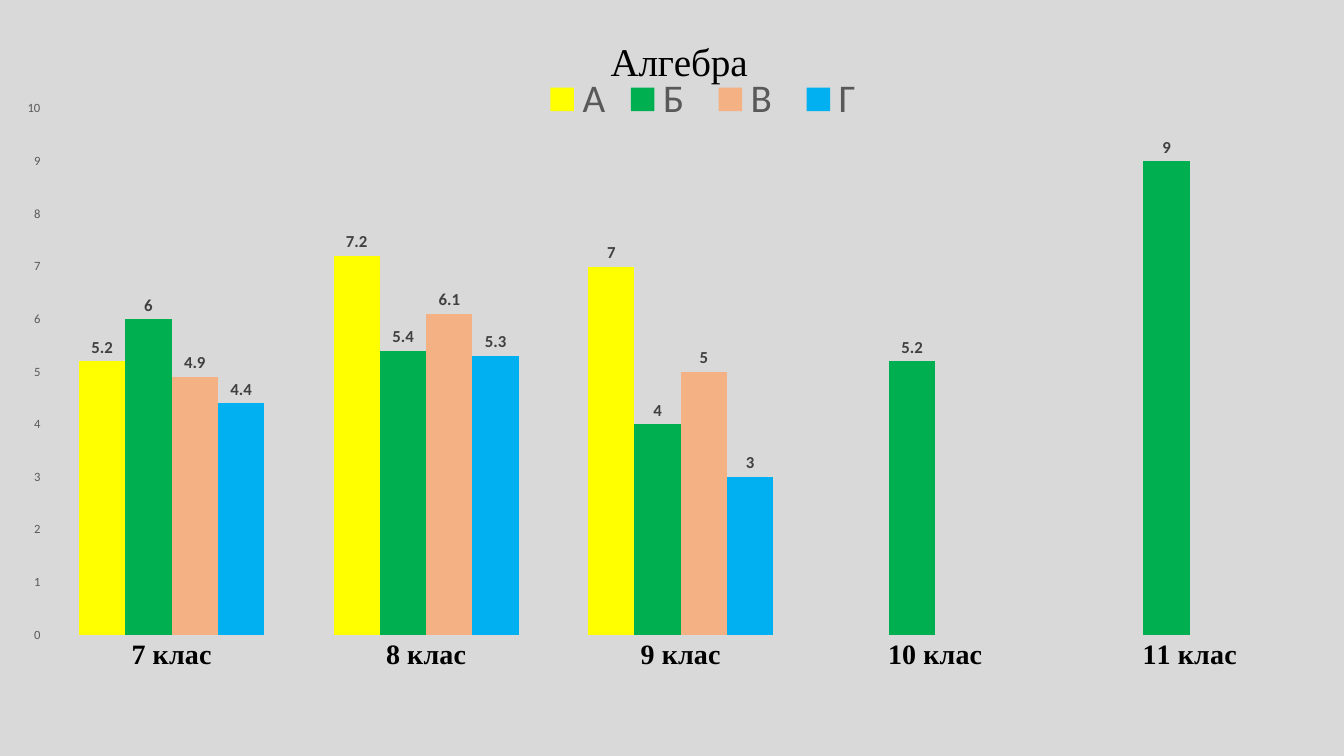
"""Builds a slide with a column chart of algebra marks by school year."""
from lxml.etree import SubElement
from pptx import Presentation
from pptx.chart.data import CategoryChartData
from pptx.dml.color import RGBColor
from pptx.enum.chart import XL_CHART_TYPE as ChartType
from pptx.enum.chart import XL_LABEL_POSITION as LabelPosition
from pptx.enum.chart import XL_LEGEND_POSITION as LegendPosition
from pptx.enum.chart import XL_TICK_MARK as TickMark
from pptx.oxml.ns import qn
from pptx.util import Pt

WIDTH, HEIGHT = Pt(960), Pt(540)
BACKGROUND = RGBColor(0xD9, 0xD9, 0xD9)
BLACK = RGBColor(0x00, 0x00, 0x00)
LABEL_GREY = RGBColor(0x40, 0x40, 0x40)
AXIS_GREY = RGBColor(0x59, 0x59, 0x59)
YELLOW = RGBColor(0xFF, 0xFF, 0x00)
GREEN = RGBColor(0x00, 0xB0, 0x50)
PEACH = RGBColor(0xF4, 0xB1, 0x83)
BLUE = RGBColor(0x00, 0xB0, 0xF0)
SANS, SERIF = "Calibri", "Times New Roman"

YEARS = ["7 клас", "8 клас", "9 клас", "10 клас", "11 клас"]
CLASSES = [
    ("А", YELLOW, [5.2, 7.2, 7, None, None]),
    ("Б ", GREEN, [6, 5.4, 4, 5.2, 9]),
    ("В ", PEACH, [4.9, 6.1, 5, None, None]),
    ("Г", BLUE, [4.4, 5.3, 3, None, None]),
]


def style_font(font, name, size, color, bold=False):
    font.name, font.size, font.bold = name, Pt(size), bold
    font.color.rgb = color


def place(element, **fractions):
    """Gives a chart part a fixed place, as fractions of the chart."""
    layout = element.find(qn("c:layout"))
    if layout is None:
        layout = SubElement(element, qn("c:layout"))
        previous = [element.find(qn(tag)) for tag in ("c:tx", "c:legendPos")]
        anchor = next((part for part in previous if part is not None), None)
        if anchor is None:
            element.insert(0, layout)
        else:
            anchor.addnext(layout)
    for child in list(layout):
        layout.remove(child)
    manual = SubElement(layout, qn("c:manualLayout"))
    if "w" in fractions:
        SubElement(manual, qn("c:layoutTarget")).set("val", "inner")
    for side in ("x", "y"):
        SubElement(manual, qn(f"c:{side}Mode")).set("val", "edge")
    for side, fraction in fractions.items():
        SubElement(manual, qn(f"c:{side}")).set("val", str(fraction))


def add_title(chart, text):
    frame = chart.chart_title.text_frame
    span = frame.paragraphs[0].add_run()
    span.text = text
    style_font(span.font, SERIF, 28, BLACK)
    chart.chart_title.include_in_layout = False
    place(chart.chart_title._element, x=0.449, y=0.04)


def add_legend(chart):
    chart.has_legend = True
    legend = chart.legend
    legend.position = LegendPosition.BOTTOM
    legend.include_in_layout = False
    style_font(legend.font, SANS, 28, AXIS_GREY)
    place(legend._element, x=0.4, y=0.09)


def style_axis(axis, *font):
    axis.has_major_gridlines = False
    axis.major_tick_mark = axis.minor_tick_mark = TickMark.NONE
    axis.format.line.fill.background()
    style_font(axis.tick_labels.font, *font)


def style_series(series, color):
    series.format.fill.solid()
    series.format.fill.fore_color.rgb = color
    series.invert_if_negative = False
    labels = series.data_labels
    labels.show_value = True
    labels.position = LabelPosition.OUTSIDE_END
    style_font(labels.font, SANS, 12, LABEL_GREY, True)


def add_marks_chart(page):
    marks = CategoryChartData()
    marks.categories = YEARS
    for name, _, values in CLASSES:
        marks.add_series(name, values)
    chart = page.shapes.add_chart(
        ChartType.COLUMN_CLUSTERED, 0, 0, WIDTH, HEIGHT, marks).chart
    style_font(chart.font, SANS, 10, BLACK)
    add_title(chart, "Алгебра")
    add_legend(chart)
    style_axis(chart.category_axis, SERIF, 20, BLACK, True)
    style_axis(chart.value_axis, SANS, 9, AXIS_GREY)
    chart.value_axis.minimum_scale = 0
    chart.value_axis.maximum_scale = 10
    chart.value_axis.major_unit = 1
    plot = chart.plots[0]
    plot.gap_width, plot.overlap, plot.vary_by_categories = 150, 0, False
    for series, (_, color, _) in zip(plot.series, CLASSES):
        style_series(series, color)
    place(chart._chartSpace.chart.plotArea, x=0.033, y=0.144, w=0.947, h=0.696)


def main():
    deck = Presentation()
    deck.slide_width, deck.slide_height = WIDTH, HEIGHT
    page = deck.slides.add_slide(deck.slide_layouts[6])
    page.background.fill.solid()
    page.background.fill.fore_color.rgb = BACKGROUND
    add_marks_chart(page)
    deck.save("out.pptx")


if __name__ == "__main__":
    main()
